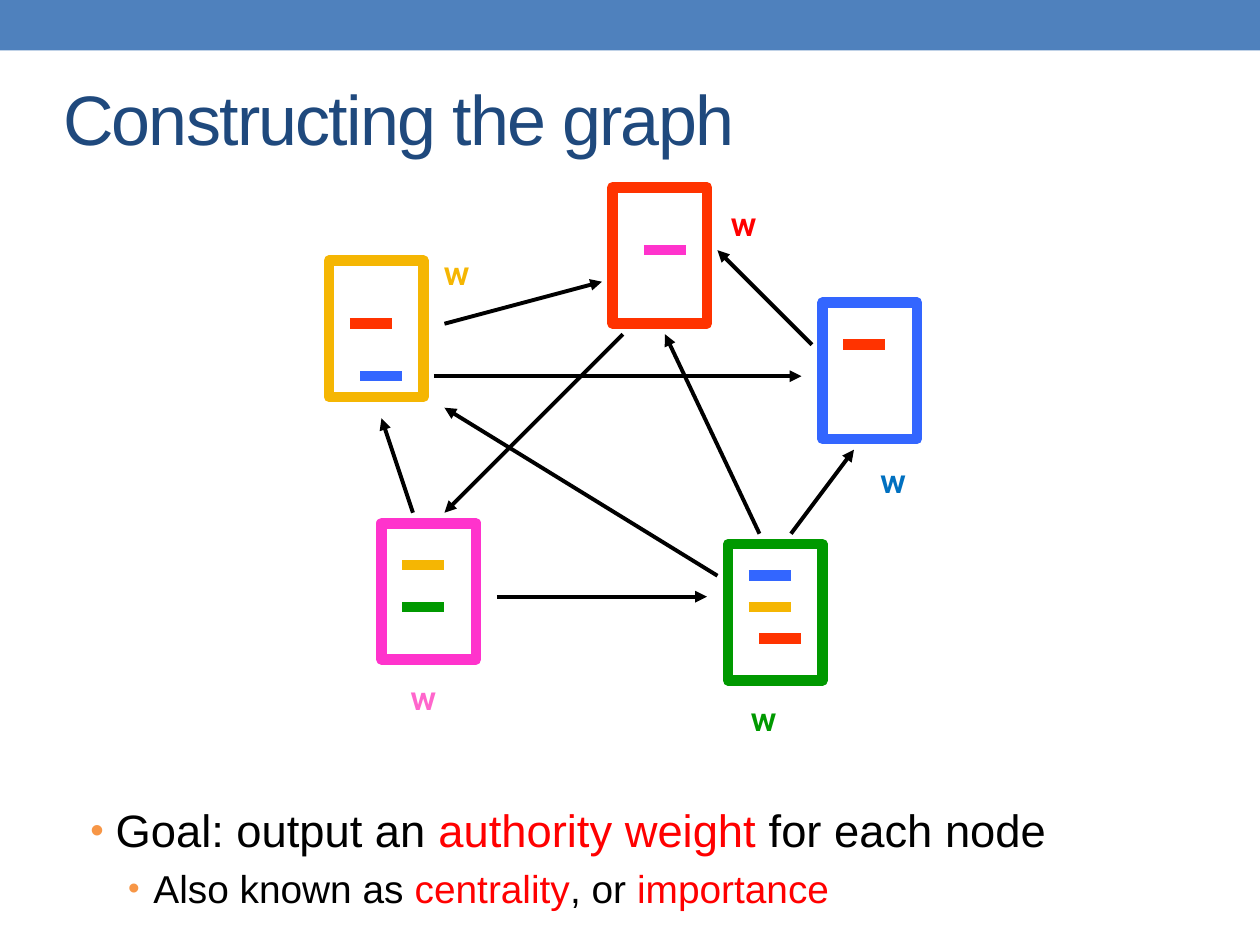
import pptx
import pptx.dml.color
import pptx.enum.shapes
import pptx.enum.text
import pptx.oxml.ns
import pptx.util
from lxml import etree

Pt = pptx.util.Pt
ANCHOR = pptx.enum.text.MSO_ANCHOR
AUTO_SIZE = pptx.enum.text.MSO_AUTO_SIZE
ALIGN = pptx.enum.text.PP_ALIGN

COLORS = {
    "white": "FFFFFF", "black": "000000", "bar": "4F81BD", "title": "1F497D",
    "bullet": "F79646", "emphasis": "FF0000",
    "yellow": "F5B603", "pink": "FF33CC", "green": "009900",
    "blue": "3366FF", "red": "FF3300",
    "pink label": "FF66CC", "blue label": "0070C0",
}

NODE_WIDTH, NODE_HEIGHT = 54, 77.8
LINK_LENGTH = 24
BORDER = 6

# node: (left, top), links inside it as (target, dx, dy)
NODES = {
    "yellow": ((188, 149), [("blue", 18, 66), ("red", 12, 36)]),
    "pink": ((218, 299), [("green", 12, 48), ("yellow", 12, 24)]),
    "green": ((416, 311), [("yellow", 12, 36), ("blue", 12, 18), ("red", 18, 54)]),
    "blue": ((470, 173), [("red", 12, 24)]),
    "red": ((350, 107), [("pink", 18, 36)]),
}

EDGES = [
    ((284, 341), (404, 341)),  # pink to green
    ((356, 191), (254, 293)),  # red to pink
    ((236, 293), (218, 239)),  # pink to yellow
    ((254, 185), (344, 161)),  # yellow to red
    ((248, 215), (458, 215)),  # yellow to blue
    ((464, 197), (410, 143)),  # blue to red
    ((434, 305), (380, 191)),  # green to red
    ((452, 305), (488, 257)),  # green to blue
    ((410, 329), (254, 233)),  # green to yellow
]

WEIGHTS = [
    ("pink label", 227.5, 382.5), ("green", 422, 394.5), ("blue label", 496, 258.5),
    ("emphasis", 410.5, 111.5), ("yellow", 246.5, 139.5),
]

# size, left margin, spans as (text, colour)
GOALS = [
    (25.9, 14.4, [("Goal: output an ", "black"), ("authority weight ", "emphasis"),
                  ("for each node", "black")]),
    (22.2, 36, [("Also known as ", "black"), ("centrality", "emphasis"),
                (", or ", "black"), ("importance", "emphasis")]),
]


def rgb(name):
    return pptx.dml.color.RGBColor.from_string(COLORS[name])


def add_xml(parent, tag, **attributes):
    child = etree.SubElement(parent, pptx.oxml.ns.qn(tag))
    for key, value in attributes.items():
        child.set(key, str(value))
    return child


def set_font(font, name, size, color=None, bold=None):
    font.name, font.size, font.bold = name, Pt(size), bold
    if color:
        font.color.rgb = rgb(color)


def add_rectangle(page, left, top, width, height, fill, border=None):
    shape = page.shapes.add_shape(
        pptx.enum.shapes.MSO_SHAPE.RECTANGLE, Pt(left), Pt(top), Pt(width), Pt(height))
    shape.shadow.inherit = False
    shape.fill.solid()
    shape.fill.fore_color.rgb = rgb(fill)
    if border:
        shape.line.color.rgb = rgb(border)
        shape.line.width = Pt(BORDER)
    else:
        shape.line.fill.background()


def add_line(page, start, end, color, width, arrow=False):
    line = page.shapes.add_connector(
        pptx.enum.shapes.MSO_CONNECTOR.STRAIGHT, *map(Pt, start + end))
    line.line.color.rgb = rgb(color)
    line.line.width = Pt(width)
    if arrow:
        add_xml(line.line._get_or_add_ln(), "a:tailEnd", type="triangle")
    add_xml(line._element.spPr, "a:effectLst")


def add_node(page, color, corner, links):
    left, top = corner
    add_rectangle(page, left, top, NODE_WIDTH, NODE_HEIGHT, "white", color)
    for target, dx, dy in links:
        x, y = left + dx, top + dy
        add_line(page, (x, y), (x + LINK_LENGTH, y), target, BORDER)


def add_weight(page, color, left, top):
    box = page.shapes.add_textbox(Pt(left), Pt(top), Pt(32.4), Pt(31))
    frame = box.text_frame
    frame.word_wrap = False
    frame.auto_size = AUTO_SIZE.SHAPE_TO_FIT_TEXT
    para = frame.paragraphs[0]
    para.text = "w"
    set_font(para.font, "Cabin", 20, color, True)


def set_title(page, text):
    title = page.shapes.title
    title.left, title.top, title.width, title.height = map(Pt, (28.8, 27.4, 607, 79.2))
    frame = title.text_frame
    frame.text = text
    frame.vertical_anchor = ANCHOR.MIDDLE
    frame.auto_size = AUTO_SIZE.NONE
    para = frame.paragraphs[0]
    para.alignment = ALIGN.LEFT
    set_font(para.font, "Arial", 40, "title")
    para.runs[0].font._element.set("spc", "-100")


def set_bullet(para, margin):
    properties = para._p.get_or_add_pPr()
    properties.set("marL", str(Pt(margin)))
    properties.set("indent", str(-Pt(14.4)))
    color = add_xml(properties, "a:buClr")
    add_xml(color, "a:srgbClr", val=COLORS["bullet"])
    add_xml(properties, "a:buSzPct", val=85000)
    add_xml(properties, "a:buFont", typeface="Arial")
    add_xml(properties, "a:buChar", char="•")


def add_goals(page):
    box = page.shapes.add_textbox(Pt(44.6), Pt(455), Pt(663), Pt(68.4))
    frame = box.text_frame
    frame.word_wrap = True
    for index, (size, margin, spans) in enumerate(GOALS):
        para = frame.add_paragraph() if index else frame.paragraphs[0]
        para.level = index
        para.space_before = Pt(round(size * 0.2, 1))
        set_bullet(para, margin)
        set_font(para.font, "Arial", size)
        for text, color in spans:
            span = para.add_run()
            span.text = text
            span.font.color.rgb = rgb(color)


def main():
    deck = pptx.Presentation()
    deck.slide_width, deck.slide_height = Pt(720), Pt(540)
    page = deck.slides.add_slide(deck.slide_layouts.get_by_name("Title Only"))
    add_rectangle(page, 0, 0, 720, 28.8, "bar")
    set_title(page, "Constructing the graph")
    add_goals(page)
    for color, (corner, links) in NODES.items():
        add_node(page, color, corner, links)
    for start, end in EDGES:
        add_line(page, start, end, "black", 2.25, arrow=True)
    for weight in WEIGHTS:
        add_weight(page, *weight)
    deck.save("out.pptx")


if __name__ == "__main__":
    main()
